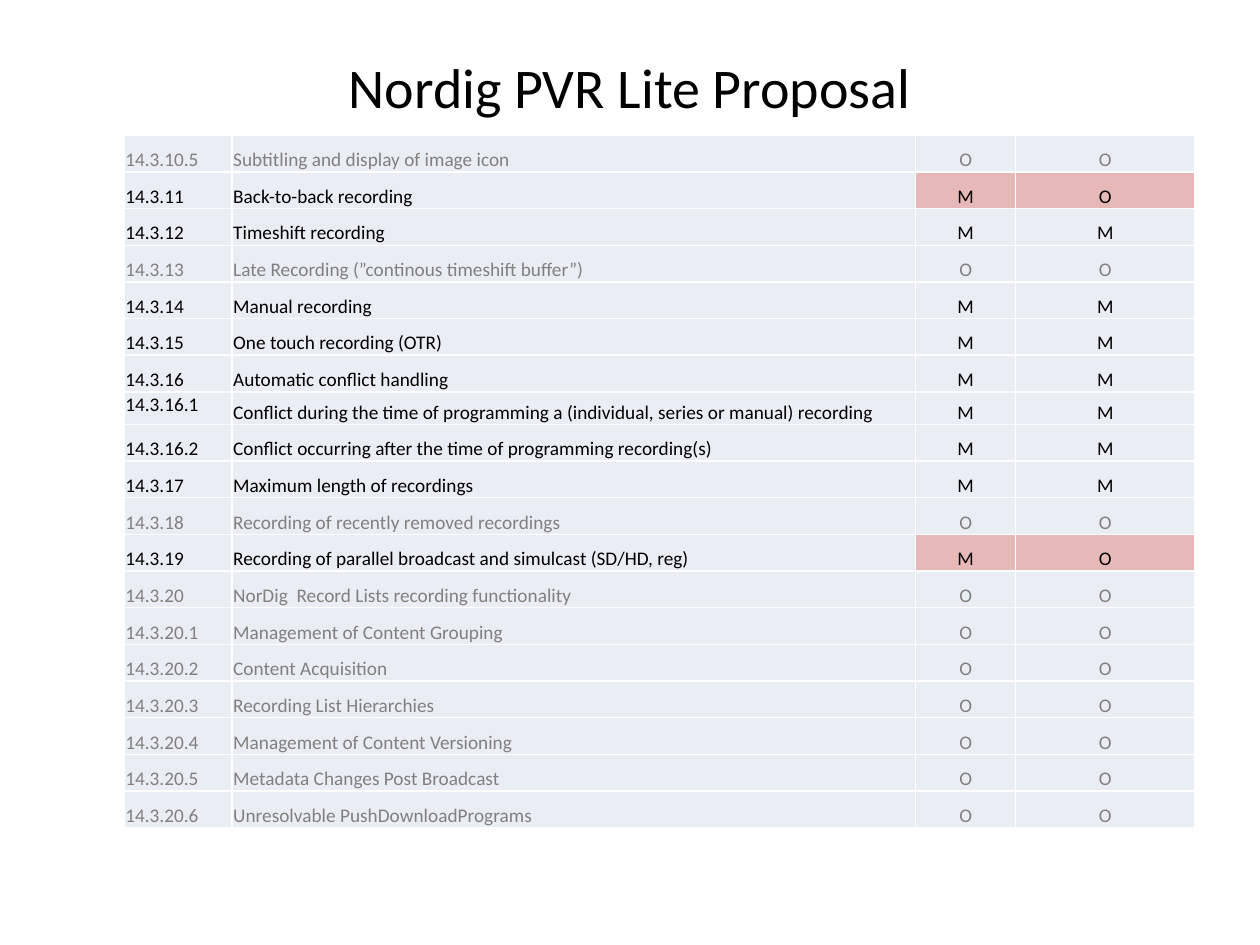
import pptx
import pptx.dml.color
import pptx.enum.text
import pptx.oxml.ns
import pptx.util
from dataclasses import dataclass
from lxml import etree

Pt = pptx.util.Pt
RGB = pptx.dml.color.RGBColor.from_string
ALIGN = pptx.enum.text.PP_ALIGN
ANCHOR = pptx.enum.text.MSO_ANCHOR
qn = pptx.oxml.ns.qn


@dataclass(frozen=True)
class Theme:
    font: str = "Calibri"
    title_size: float = 32
    cell_size: float = 11
    text: str = "000000"
    muted: str = "808080"
    cell_fill: str = "E9EDF4"
    changed_fill: str = "E6B9B8"
    border: str = "FFFFFF"
    border_width: float = 1
    inset: float = 0.7


# Section, requirement, current status, proposed status (M mandatory, O optional)
REQUIREMENTS = [
    ("14.3.10.5", "Subtitling and display of image icon", "O", "O"),
    ("14.3.11", "Back-to-back recording", "M", "O"),
    ("14.3.12", "Timeshift recording", "M", "M"),
    ("14.3.13", "Late Recording (”continous timeshift buffer”)", "O", "O"),
    ("14.3.14", "Manual recording", "M", "M"),
    ("14.3.15", "One touch recording (OTR)", "M", "M"),
    ("14.3.16", "Automatic conflict handling", "M", "M"),
    ("14.3.16.1", "Conflict during the time of programming a "
     "(individual, series or manual) recording", "M", "M"),
    ("14.3.16.2", "Conflict occurring after the time of programming recording(s)", "M", "M"),
    ("14.3.17", "Maximum length of recordings", "M", "M"),
    ("14.3.18", "Recording of recently removed recordings", "O", "O"),
    ("14.3.19", "Recording of parallel broadcast and simulcast (SD/HD, reg)", "M", "O"),
    ("14.3.20", "NorDig  Record Lists recording functionality", "O", "O"),
    ("14.3.20.1", "Management of Content Grouping", "O", "O"),
    ("14.3.20.2", "Content Acquisition", "O", "O"),
    ("14.3.20.3", "Recording List Hierarchies", "O", "O"),
    ("14.3.20.4", "Management of Content Versioning", "O", "O"),
    ("14.3.20.5", "Metadata Changes Post Broadcast", "O", "O"),
    ("14.3.20.6", "Unresolvable PushDownloadPrograms", "O", "O"),
]
COL_WIDTHS = [61.7, 390.7, 57.1, 102.5]
ROW_HEIGHT = 20.95
SHORT_ROW, SHORT_HEIGHT = "14.3.16.1", 18.6


class Deck:
    def __init__(self, theme, width, height):
        self.theme = theme
        self.prs = pptx.Presentation()
        self.prs.slide_width, self.prs.slide_height = Pt(width), Pt(height)
        self.s = None

    def add_slide(self):
        self.s = self.prs.slides.add_slide(self.prs.slide_layouts[6])

    def add_text(self, tf, text, size, color, align):
        p = tf.paragraphs[0]
        p.alignment = align
        r = p.add_run()
        r.text = text
        r.font.name, r.font.size = self.theme.font, Pt(size)
        r.font.color.rgb = RGB(color)

    def title(self, text, x, y, w, h):
        sp = self.s.shapes.add_textbox(Pt(x), Pt(y), Pt(w), Pt(h))
        tf = sp.text_frame
        tf.word_wrap = True
        tf.vertical_anchor = ANCHOR.MIDDLE
        self.add_text(tf, text, self.theme.title_size, self.theme.text, ALIGN.CENTER)

    def borders(self, cell):
        tc_pr = cell._tc.get_or_add_tcPr()
        for side in ("a:lnL", "a:lnR", "a:lnT", "a:lnB"):
            ln = etree.SubElement(tc_pr, qn(side), w=str(Pt(self.theme.border_width)))
            fill = etree.SubElement(ln, qn("a:solidFill"))
            etree.SubElement(fill, qn("a:srgbClr"), val=self.theme.border)

    def cell(self, cell, text, color, fill, align, anchor):
        inset = Pt(self.theme.inset)
        cell.margin_left = cell.margin_right = cell.margin_top = inset
        cell.margin_bottom = 0
        cell.vertical_anchor = anchor
        self.borders(cell)
        cell.fill.solid()
        cell.fill.fore_color.rgb = RGB(fill)
        self.add_text(cell.text_frame, text, self.theme.cell_size, color, align)

    def requirement_table(self, rows, x, y, widths, heights):
        t = self.theme
        table = self.s.shapes.add_table(len(rows), len(widths), Pt(x), Pt(y),
                                        Pt(sum(widths)), Pt(sum(heights))).table
        table.first_row = table.horz_banding = False
        for column, width in zip(table.columns, widths):
            column.width = Pt(width)
        for i, (row, height) in enumerate(zip(rows, heights)):
            table.rows[i].height = Pt(height)
            section, _, current, proposed = row
            # Optional in both profiles is muted; a differing status is highlighted
            color = t.muted if current == proposed == "O" else t.text
            for j, text in enumerate(row):
                is_status = j >= 2
                changed = is_status and current != proposed
                top = j == 0 and section == SHORT_ROW
                self.cell(table.cell(i, j), text, color,
                          t.changed_fill if changed else t.cell_fill,
                          ALIGN.CENTER if is_status else ALIGN.LEFT,
                          ANCHOR.TOP if top else ANCHOR.BOTTOM)


def main():
    deck = Deck(Theme(), 720, 540)
    deck.add_slide()

    # Heading
    deck.title("Nordig PVR Lite Proposal", 36, 21.6, 648, 55.4)

    # Requirements
    heights = [SHORT_HEIGHT if row[0] == SHORT_ROW else ROW_HEIGHT for row in REQUIREMENTS]
    deck.requirement_table(REQUIREMENTS, 70.9, 77.3, COL_WIDTHS, heights)

    deck.prs.save("out.pptx")


if __name__ == "__main__":
    main()
